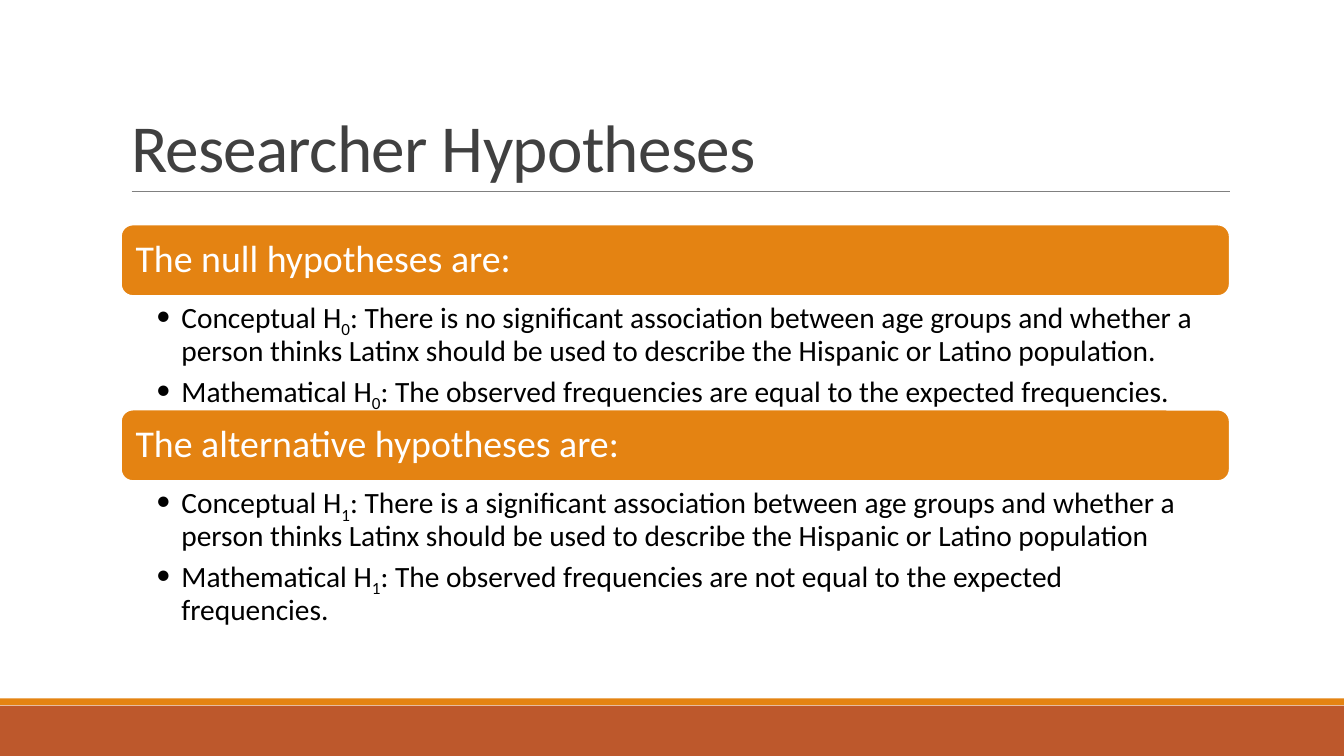
from dataclasses import dataclass

from lxml.etree import SubElement
from pptx import Presentation
from pptx.dml.color import RGBColor as RGB
from pptx.enum.shapes import MSO_CONNECTOR as Connector, MSO_SHAPE as Shape
from pptx.enum.text import MSO_ANCHOR as Anchor, MSO_AUTO_SIZE as AutoSize, PP_ALIGN as Align
from pptx.oxml.ns import qn
from pptx.util import Pt


@dataclass(frozen=True)
class Theme:
    font: str = "Calibri"
    accent: str = "E48312"
    footer: str = "BD582C"
    rule: str = "808080"
    title: str = "404040"
    body: str = "000000"
    white: str = "FFFFFF"
    title_size: int = 48
    heading_size: int = 27
    body_size: int = 21


class SlideBuilder:
    def __init__(self, slide, theme):
        self.slide, self.theme = slide, theme

    def add_run(self, paragraph, text, size, color):
        run = paragraph.add_run()
        run.text = text
        run.font.name = self.theme.font
        run.font.size = Pt(size)
        run.font.color.rgb = RGB.from_string(color)
        return run.font._element

    def set_frame(self, frame, anchor, insets):
        frame.word_wrap = True
        frame.auto_size = AutoSize.NONE
        frame.vertical_anchor = anchor
        (frame.margin_left, frame.margin_top,
         frame.margin_right, frame.margin_bottom) = map(Pt, insets)

    def title(self, text, *box):
        title = self.slide.shapes.title
        title.left, title.top, title.width, title.height = map(Pt, box)
        self.set_frame(title.text_frame, Anchor.BOTTOM, (7.2, 3.6, 7.2, 3.6))
        paragraph = title.text_frame.paragraphs[0]
        paragraph.alignment = Align.LEFT
        paragraph.line_spacing = 0.85
        run = self.add_run(paragraph, text, self.theme.title_size, self.theme.title)
        run.set("spc", "-50")

    def block(self, kind, color, *box):
        block = self.slide.shapes.add_shape(kind, *map(Pt, box))
        block.shadow.inherit = False
        block.fill.solid()
        block.fill.fore_color.rgb = RGB.from_string(color)
        block.line.fill.background()
        return block

    def rule(self, left, right, y):
        rule = self.slide.shapes.add_connector(
            Connector.STRAIGHT, Pt(left), Pt(y), Pt(right), Pt(y))
        rule.line.color.rgb = RGB.from_string(self.theme.rule)
        rule.line.width = Pt(0.5)
        SubElement(rule._element.spPr, qn("a:effectLst"))

    def heading(self, text, *box):
        bar = self.block(Shape.ROUNDED_RECTANGLE, self.theme.accent, *box)
        bar.line.color.rgb = RGB.from_string(self.theme.white)
        bar.line.width = Pt(1.25)
        self.set_frame(bar.text_frame, Anchor.MIDDLE, (8, 8, 8, 8))
        paragraph = bar.text_frame.paragraphs[0]
        paragraph.alignment = Align.LEFT
        paragraph.line_spacing = 0.9
        self.add_run(paragraph, text, self.theme.heading_size, self.theme.white)

    def bullets(self, items, symbol, *box):
        frame = self.slide.shapes.add_textbox(*map(Pt, box)).text_frame
        self.set_frame(frame, Anchor.TOP, (25.2, 2.7, 15, 2.7))
        for index, (label, statement) in enumerate(items):
            paragraph = frame.add_paragraph() if index else frame.paragraphs[0]
            paragraph.level = 1
            paragraph.line_spacing = 0.9
            paragraph.space_after = Pt(4.2)
            properties = paragraph._p.get_or_add_pPr()
            properties.set("marL", str(Pt(18)))
            properties.set("indent", str(-Pt(18)))
            SubElement(properties, qn("a:buFont")).set("typeface", self.theme.font)
            SubElement(properties, qn("a:buChar")).set("char", "•")
            for text, baseline in ((f"{label} H", 0), (symbol, -25000), (f": {statement}", 0)):
                run = self.add_run(paragraph, text, self.theme.body_size, self.theme.body)
                if baseline:
                    run.set("baseline", str(baseline))
            # The bullet takes its size from the paragraph end
            SubElement(paragraph._p, qn("a:endParaRPr")).set("sz", str(self.theme.body_size * 100))


WIDTH, HEIGHT = 960, 540
LEFT, CONTENT_WIDTH, BAR_HEIGHT = 86.4, 792, 51

# Heading, subscript, top, body height, bullets
HYPOTHESES = [
    ("The null hypotheses are:", "0", 160.4, 81, [
        ("Conceptual", "There is no significant association between age groups and whether a "
         "person thinks Latinx should be used to describe the Hispanic or Latino population."),
        ("Mathematical", "The observed frequencies are equal to the expected frequencies."),
    ]),
    ("The alternative hypotheses are:", "1", 292.6, 104, [
        ("Conceptual", "There is a significant association between age groups and whether a "
         "person thinks Latinx should be used to describe the Hispanic or Latino population"),
        ("Mathematical", "The observed frequencies are not equal to the expected frequencies."),
    ]),
]


def main():
    deck = Presentation()
    deck.slide_width, deck.slide_height = Pt(WIDTH), Pt(HEIGHT)
    theme = Theme()
    builder = SlideBuilder(deck.slides.add_slide(deck.slide_layouts[5]), theme)

    # Footer bands and title rule
    builder.block(Shape.RECTANGLE, theme.footer, 0, 504, WIDTH, 36)
    builder.block(Shape.RECTANGLE, theme.accent, 0, 498.8, WIDTH, 5)
    builder.rule(94, 878.6, 136.8)

    # Title
    builder.title("Researcher Hypotheses", LEFT, 22.5, CONTENT_WIDTH, 114.2)

    # Heading bars lie behind all the bullets, so no subscript is covered
    for heading, _, top, _, _ in HYPOTHESES:
        builder.heading(heading, LEFT, top, CONTENT_WIDTH, BAR_HEIGHT)
    for _, symbol, top, body_height, items in HYPOTHESES:
        builder.bullets(items, symbol, LEFT, top + BAR_HEIGHT, CONTENT_WIDTH, body_height)

    deck.save("out.pptx")


if __name__ == "__main__":
    main()
